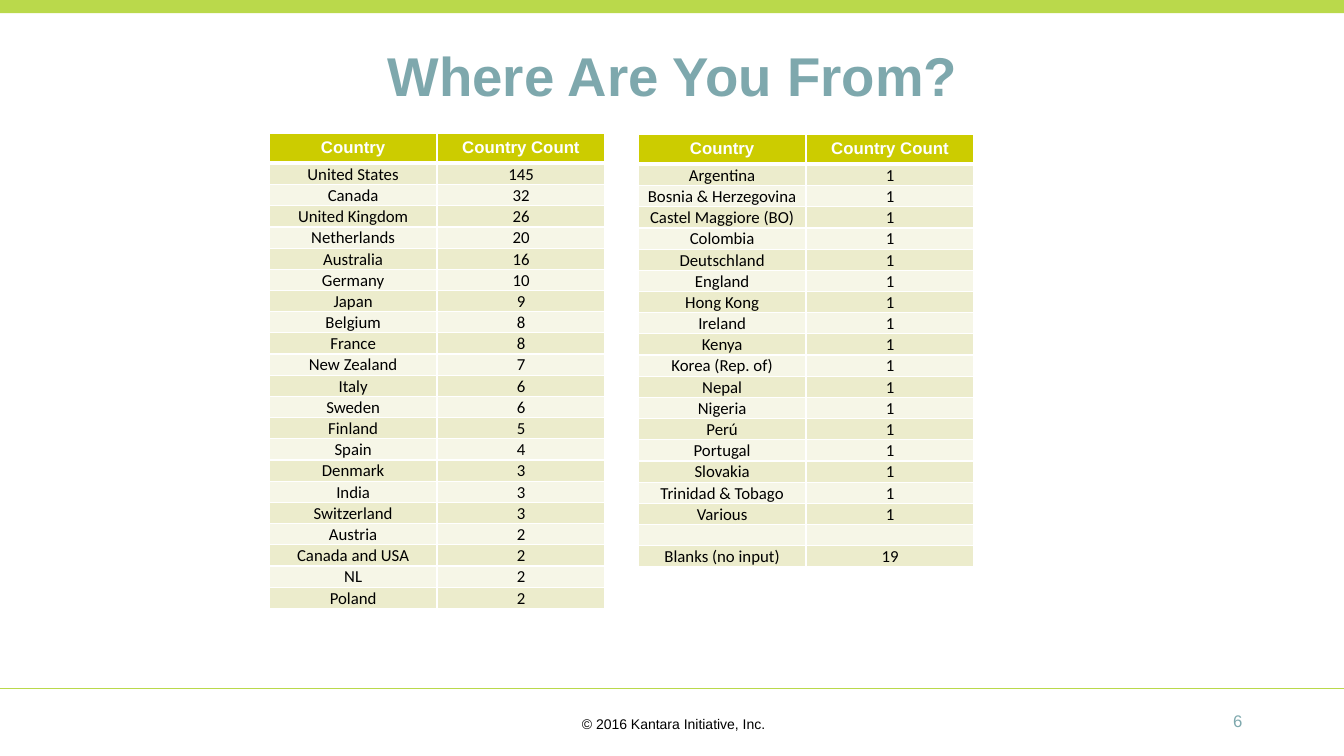
from lxml.etree import SubElement
from pptx import Presentation
from pptx.dml.color import RGBColor
from pptx.enum.shapes import MSO_CONNECTOR, MSO_SHAPE
from pptx.enum.text import MSO_ANCHOR, PP_ALIGN
from pptx.oxml.ns import qn
from pptx.util import Inches, Pt

LIME = "BAD94B"
TEAL = "7EA8AD"
BLACK = "000000"
WHITE = "FFFFFF"
HEADER_FILL = "CCCC00"
BAND_FILLS = ["ECECCC", "F6F6E7"]
HEADINGS = ("Country", "Country Count")

FREQUENT = [
    ("United States", 145), ("Canada", 32), ("United Kingdom", 26),
    ("Netherlands", 20), ("Australia", 16), ("Germany", 10), ("Japan", 9),
    ("Belgium", 8), ("France", 8), ("New Zealand", 7), ("Italy", 6),
    ("Sweden", 6), ("Finland", 5), ("Spain", 4), ("Denmark", 3),
    ("India", 3), ("Switzerland", 3), ("Austria", 2), ("Canada and USA", 2),
    ("NL", 2), ("Poland", 2),
]
SINGLE = [
    "Argentina", "Bosnia & Herzegovina", "Castel Maggiore (BO)", "Colombia",
    "Deutschland", "England", "Hong Kong", "Ireland", "Kenya",
    "Korea (Rep. of)", "Nepal", "Nigeria", "Perú", "Portugal", "Slovakia",
    "Trinidad & Tobago", "Various",
]
OCCASIONAL = [(country, 1) for country in SINGLE] + [("", ""), ("Blanks (no input)", 19)]


def color(hex_value):
    return RGBColor.from_string(hex_value)


def write(frame, text, size, hex_value, align, font="Arial", bold=False):
    frame.text = text
    paragraph = frame.paragraphs[0]
    paragraph.alignment = align
    for run in paragraph.runs:
        run.font.name = font
        run.font.size = Pt(size)
        run.font.bold = bold
        run.font.color.rgb = color(hex_value)
    if not text:
        SubElement(paragraph._p, qn("a:endParaRPr"), sz=str(size * 100))


def add_title(slide, text):
    title = slide.shapes.title
    title.left, title.top = Inches(0.67), Inches(0.17)
    title.width, title.height = Inches(12), Inches(1.15)
    title.text_frame.vertical_anchor = MSO_ANCHOR.MIDDLE
    write(title.text_frame, text, 39, TEAL, PP_ALIGN.CENTER, bold=True)


def add_label(slide, left, top, width, height, text, size, hex_value, align):
    label = slide.shapes.add_textbox(Inches(left), Inches(top), Inches(width), Inches(height))
    label.text_frame.word_wrap = True
    label.text_frame.vertical_anchor = MSO_ANCHOR.MIDDLE
    write(label.text_frame, text, size, hex_value, align)


def add_top_band(slide):
    band = slide.shapes.add_shape(MSO_SHAPE.RECTANGLE, 0, 0, Inches(13.33), Inches(0.13))
    band.shadow.inherit = False
    band.fill.solid()
    band.fill.fore_color.rgb = color(LIME)
    band.line.fill.background()


def add_footer_rule(slide):
    rule = slide.shapes.add_connector(
        MSO_CONNECTOR.STRAIGHT, 0, Inches(6.83), Inches(13.33), Inches(6.83))
    rule.line.color.rgb = color(LIME)
    rule.line.width = Pt(0.5)
    SubElement(rule._element.spPr, qn("a:effectLst"))


def style_cell(cell, fill, top_width, bottom_width):
    properties = cell._tc.get_or_add_tcPr()
    for side, width in (("L", 1), ("R", 1), ("T", top_width), ("B", bottom_width)):
        border = SubElement(properties, qn(f"a:ln{side}"), w=str(Pt(width)))
        SubElement(SubElement(border, qn("a:solidFill")), qn("a:srgbClr"), val=WHITE)
    cell.fill.solid()
    cell.fill.fore_color.rgb = color(fill)


def add_country_table(slide, left, top, counts):
    header_height, row_height = 0.28, 0.21
    table = slide.shapes.add_table(
        len(counts) + 1, 2, Inches(left), Inches(top), Inches(3.33),
        Inches(header_height + row_height * len(counts))).table
    for row_index, values in enumerate([HEADINGS] + counts):
        is_header = row_index == 0
        table.rows[row_index].height = Inches(header_height if is_header else row_height)
        for column_index, value in enumerate(values):
            cell = table.cell(row_index, column_index)
            if is_header:
                style_cell(cell, HEADER_FILL, 1, 3)
                write(cell.text_frame, value, 12, WHITE, PP_ALIGN.CENTER, bold=True)
            else:
                style_cell(cell, BAND_FILLS[(row_index - 1) % 2], 3 if row_index == 1 else 1, 1)
                cell.margin_left = cell.margin_right = cell.margin_top = Inches(0.01)
                cell.margin_bottom = 0
                cell.vertical_anchor = MSO_ANCHOR.BOTTOM
                write(cell.text_frame, str(value), 12, BLACK, PP_ALIGN.CENTER, "Calibri")


def main():
    deck = Presentation()
    deck.slide_width, deck.slide_height = Inches(13.33), Inches(7.5)
    slide = deck.slides.add_slide(deck.slide_layouts[5])
    add_top_band(slide)
    add_footer_rule(slide)
    add_label(slide, 5.54, 7.05, 2.28, 0.27, "© 2016 Kantara Initiative, Inc.",
              10, BLACK, PP_ALIGN.CENTER)
    add_title(slide, "Where Are You From?")
    add_label(slide, 9.42, 6.95, 3, 0.4, "6", 12, TEAL, PP_ALIGN.RIGHT)
    add_country_table(slide, 2.67, 1.32, FREQUENT)
    add_country_table(slide, 6.33, 1.33, OCCASIONAL)
    deck.save("out.pptx")


if __name__ == "__main__":
    main()
